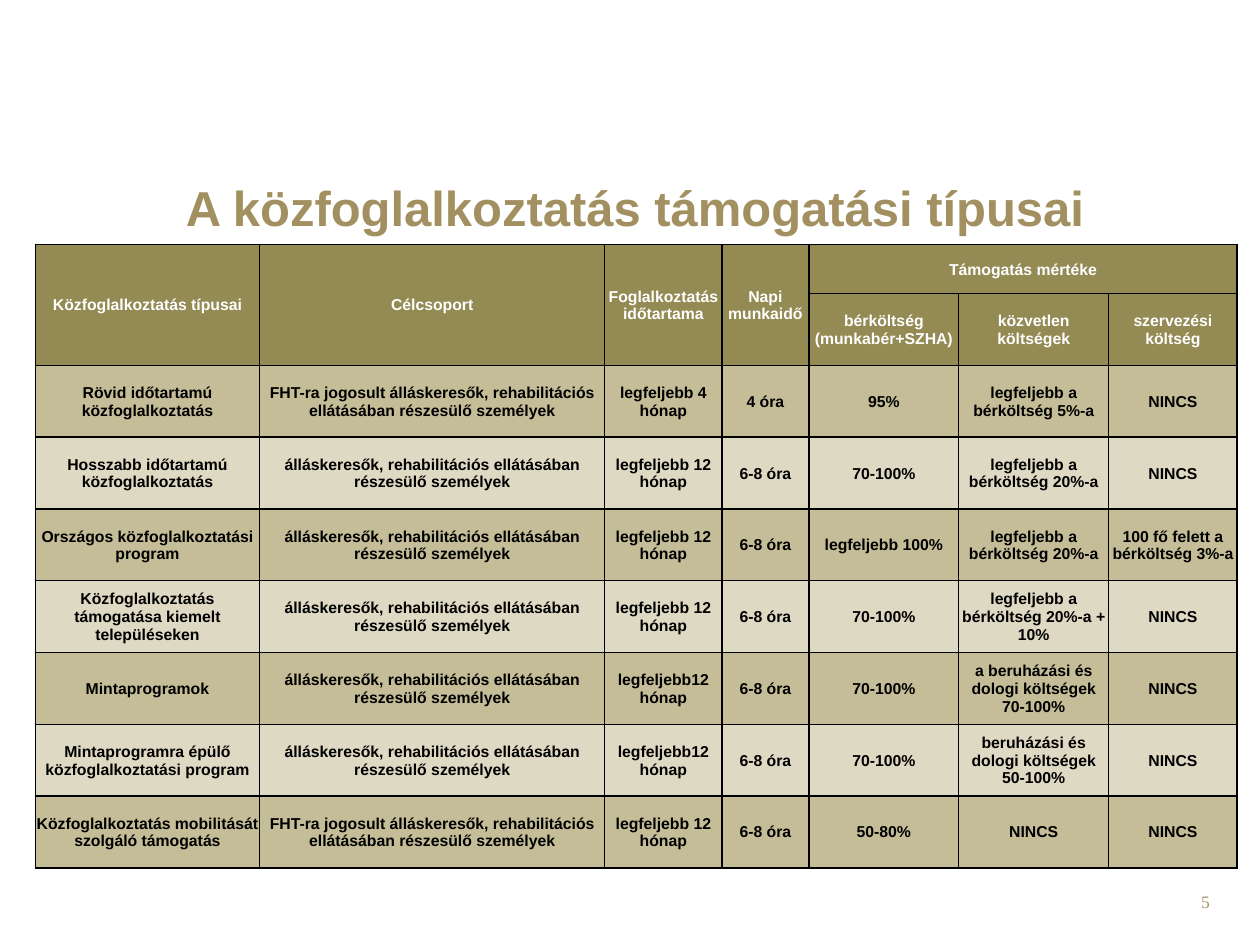
from lxml import etree
from pptx import Presentation
from pptx.dml.color import RGBColor
from pptx.enum import text
from pptx.oxml.ns import qn
from pptx.util import Inches, Pt

THEME = {
    "font": "Arial", "number_font": "Times New Roman",
    "title": "A29061", "number": "A69765", "header": "948A54",
    "bands": ("C4BD97", "DDD9C3"), "light": "FFFFFF", "dark": "000000",
    "title_size": 28, "cell_size": 9, "number_size": 10, "border": 1,
}

# Content
TITLE = "A közfoglalkoztatás támogatási típusai"
PAGE = "5"
HEADERS = ["Közfoglalkoztatás típusai", "Célcsoport",
           "Foglalkoztatás időtartama", "Napi munkaidő"]
GROUP = "Támogatás mértéke"
SUBHEADERS = ["bérköltség (munkabér+SZHA)", "közvetlen költségek",
              "szervezési költség"]
SEEKERS = "álláskeresők, rehabilitációs ellátásában részesülő személyek"
FHT = "FHT-ra jogosult " + SEEKERS
NONE = "NINCS"
ROWS = [
    ("Rövid időtartamú közfoglalkoztatás", FHT, "legfeljebb 4 hónap",
     "4 óra", "95%", "legfeljebb a bérköltség 5%-a", NONE),
    ("Hosszabb időtartamú közfoglalkoztatás", SEEKERS, "legfeljebb 12 hónap",
     "6-8 óra", "70-100%", "legfeljebb a bérköltség 20%-a", NONE),
    ("Országos közfoglalkoztatási program", SEEKERS, "legfeljebb 12 hónap",
     "6-8 óra", "legfeljebb 100%", "legfeljebb a bérköltség 20%-a",
     "100 fő felett a bérköltség 3%-a"),
    ("Közfoglalkoztatás támogatása kiemelt településeken", SEEKERS,
     "legfeljebb 12 hónap", "6-8 óra", "70-100%",
     "legfeljebb a bérköltség 20%-a + 10%", NONE),
    ("Mintaprogramok", SEEKERS, "legfeljebb12 hónap", "6-8 óra", "70-100%",
     "a beruházási és dologi költségek 70-100%", NONE),
    ("Mintaprogramra épülő közfoglalkoztatási program", SEEKERS,
     "legfeljebb12 hónap", "6-8 óra", "70-100%",
     "beruházási és dologi költségek 50-100%", NONE),
    ("Közfoglalkoztatás mobilitását szolgáló támogatás", FHT,
     "legfeljebb 12 hónap", "6-8 óra", "50-80%", NONE, NONE),
]
COLS = [1.78, 2.74, 0.93, 0.69, 1.19, 1.19, 1.02]
HEIGHTS = [0.39] + [0.57] * (len(ROWS) + 1)


def write(tf, value, size, color, align, font=THEME["font"], bold=True):
    p = tf.paragraphs[0]
    p.text = value
    p.alignment = align
    p.font.name, p.font.size, p.font.bold = font, Pt(size), bold
    p.font.color.rgb = RGBColor.from_string(color)


def add_text(s, box, value, top_inset, *style, **options):
    tf = s.shapes.add_textbox(*map(Inches, box)).text_frame
    tf.word_wrap = True
    tf.margin_top = Inches(top_inset)
    write(tf, value, *style, **options)


def style_cell(cell, fill):
    cell.margin_left = cell.margin_right = cell.margin_top = Inches(0.01)
    cell.margin_bottom = 0
    cell.vertical_anchor = text.MSO_ANCHOR.MIDDLE
    # Borders come before the fill in the cell properties
    tc_pr = cell._tc.get_or_add_tcPr()
    for side in ("a:lnL", "a:lnR", "a:lnT", "a:lnB"):
        ln = etree.SubElement(tc_pr, qn(side), w=str(Pt(THEME["border"])))
        solid = etree.SubElement(ln, qn("a:solidFill"))
        etree.SubElement(solid, qn("a:srgbClr"), val=THEME["dark"])
    cell.fill.solid()
    cell.fill.fore_color.rgb = RGBColor.from_string(fill)


def add_support_table(s):
    table = s.shapes.add_table(
        len(HEIGHTS), len(COLS), Inches(0.28), Inches(1.94),
        Inches(sum(COLS)), Inches(sum(HEIGHTS))).table
    for col, width in zip(table.columns, COLS):
        col.width = Inches(width)
    for row, height in zip(table.rows, HEIGHTS):
        row.height = Inches(height)

    # Two header rows, then the bands
    blanks = [""] * len(HEADERS)
    grid = [HEADERS + [GROUP, "", ""], blanks + SUBHEADERS] + ROWS
    for i, values in enumerate(grid):
        head = i < 2
        fill = THEME["header"] if head else THEME["bands"][i % 2]
        color = THEME["light"] if head else THEME["dark"]
        for j, value in enumerate(values):
            cell = table.cell(i, j)
            style_cell(cell, fill)
            if value:
                write(cell.text_frame, value, THEME["cell_size"], color,
                      text.PP_ALIGN.CENTER)

    # Merged headers
    for j in range(len(HEADERS)):
        table.cell(0, j).merge(table.cell(1, j))
    table.cell(0, len(HEADERS)).merge(table.cell(0, len(COLS) - 1))


def main():
    prs = Presentation()
    prs.slide_width, prs.slide_height = Inches(10), Inches(7.5)
    s = prs.slides.add_slide(prs.slide_layouts[6])
    # Page number
    add_text(s, (7.37, 7.02, 2.33, 0.4), PAGE, 0.05, THEME["number_size"],
             THEME["number"], text.PP_ALIGN.RIGHT,
             font=THEME["number_font"], bold=False)
    # Title
    add_text(s, (0.51, 1.31, 9.06, 0.47), TITLE, 0.1, THEME["title_size"],
             THEME["title"], text.PP_ALIGN.CENTER)
    add_support_table(s)
    prs.save("out.pptx")


if __name__ == "__main__":
    main()
